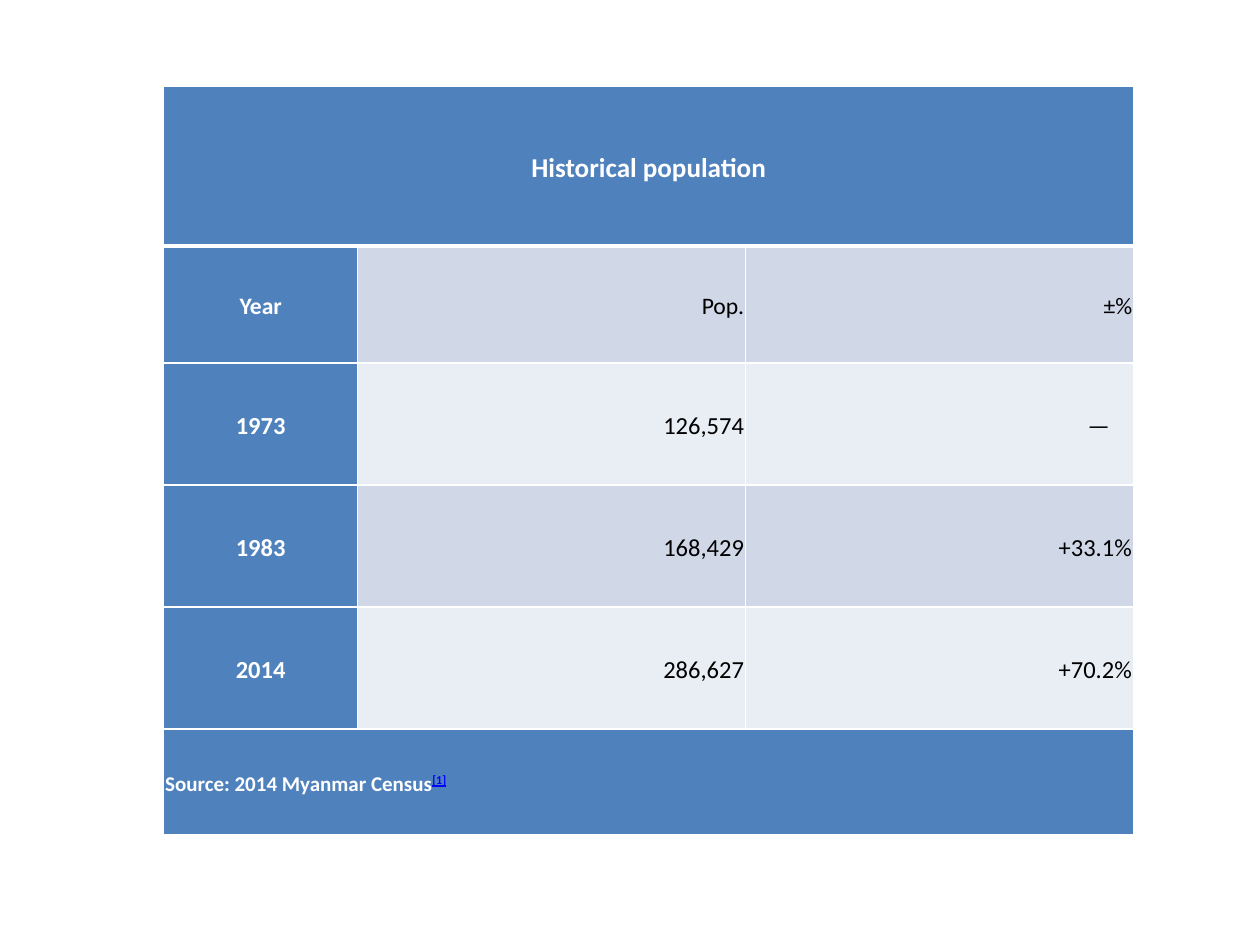
from lxml import etree
from pptx import Presentation
from pptx.dml.color import RGBColor
from pptx.enum.text import MSO_ANCHOR, PP_ALIGN
from pptx.oxml.ns import qn
from pptx.util import Cm, Pt

LEFT, CENTER, RIGHT = PP_ALIGN.LEFT, PP_ALIGN.CENTER, PP_ALIGN.RIGHT
MIDDLE = MSO_ANCHOR.MIDDLE

COLORS = {
    "head": "4F81BD",
    "dark_band": "D0D8E8",
    "light_band": "E9EDF4",
    "white": "FFFFFF",
    "black": "000000",
    "note": "0000FF",
}


class Deck:
    """Holds the style and the current slide."""

    font = "Calibri"

    def __init__(self, width, height):
        self.prs = Presentation()
        self.prs.slide_width, self.prs.slide_height = Cm(width), Cm(height)
        self.s = self.prs.slides.add_slide(self.prs.slide_layouts[6])

    def table(self, left, top, widths, heights):
        table = self.s.shapes.add_table(
            len(heights), len(widths), Cm(left), Cm(top),
            Cm(sum(widths)), Cm(sum(heights))).table
        for col, width in zip(table.columns, widths):
            col.width = Cm(width)
        for row, height in zip(table.rows, heights):
            row.height = Cm(height)
        return table

    def cell(self, cell, text, fill, size, align, color="white", bold=True,
             margin=0.03, right=None):
        cell.fill.solid()
        cell.fill.fore_color.rgb = RGBColor.from_string(COLORS[fill])
        layout = {
            "vertical_anchor": MIDDLE,
            "margin_left": Cm(margin),
            "margin_top": Cm(margin),
            "margin_right": Cm(margin if right is None else right),
            "margin_bottom": Cm(margin),
        }
        for name, value in layout.items():
            setattr(cell, name, value)
        p = cell.text_frame.paragraphs[0]
        spacing = {"alignment": align, "line_spacing": 1.15, "space_after": Pt(12)}
        for name, value in spacing.items():
            setattr(p, name, value)
        self.run(p, text, size, color, bold=bold)
        return p

    def run(self, p, text, size, color, **formats):
        r = p.add_run()
        r.text = text
        for name, value in {"name": self.font, "size": Pt(size), **formats}.items():
            setattr(r.font, name, value)
        r.font.color.rgb = RGBColor.from_string(COLORS[color])
        return r

    def borders(self, cell, **widths):
        tcPr = cell._tc.get_or_add_tcPr()
        for i, side in enumerate("LRTB"):
            ln = etree.Element(qn(f"a:ln{side}"), w=str(Pt(widths.get(side, 1))))
            fill = etree.SubElement(ln, qn("a:solidFill"))
            etree.SubElement(fill, qn("a:srgbClr"), val=COLORS["white"])
            tcPr.insert(i, ln)


def main():
    deck = Deck(25.4, 19.05)
    rows = [
        ("Year", "Pop.", "±%"),
        ("1973", "126,574", "—"),
        ("1983", "168,429", "+33.1%"),
        ("2014", "286,627", "+70.2%"),
    ]
    table = deck.table(3.3, 1.73, [3.91, 7.82, 7.82],
                       [3.23, 2.36, 2.46, 2.46, 2.46, 2.13])
    last = len(rows) + 1

    # Title and source rows span the table
    for i in (0, last):
        table.cell(i, 0).merge(table.cell(i, 2))
    deck.cell(table.cell(0, 0), "Historical population", "head", 15.5, CENTER,
              margin=0.1)
    p = deck.cell(table.cell(last, 0), "Source: 2014 Myanmar Census", "head", 12, LEFT)
    note = deck.run(p, "[1]", 12, "note", bold=True, underline=True)
    note._r.get_or_add_rPr().set("baseline", "30000")

    # Year column and banded figures
    for i, (year, *figures) in enumerate(rows, 1):
        size = 13.5 if i == 1 else 14
        band = "dark_band" if i % 2 else "light_band"
        deck.cell(table.cell(i, 0), year, "head", size, CENTER)
        for j, text in enumerate(figures, 1):
            deck.cell(table.cell(i, j), text, band, size, RIGHT, "black", False,
                      right=0.48 if text == "—" else None)

    # White grid, thicker under the title
    for i in range(last + 1):
        for j in range(3):
            deck.borders(table.cell(i, j), T=3 if i == 1 else 1, B=3 if i == 0 else 1)

    deck.prs.save("out.pptx")


if __name__ == "__main__":
    main()
